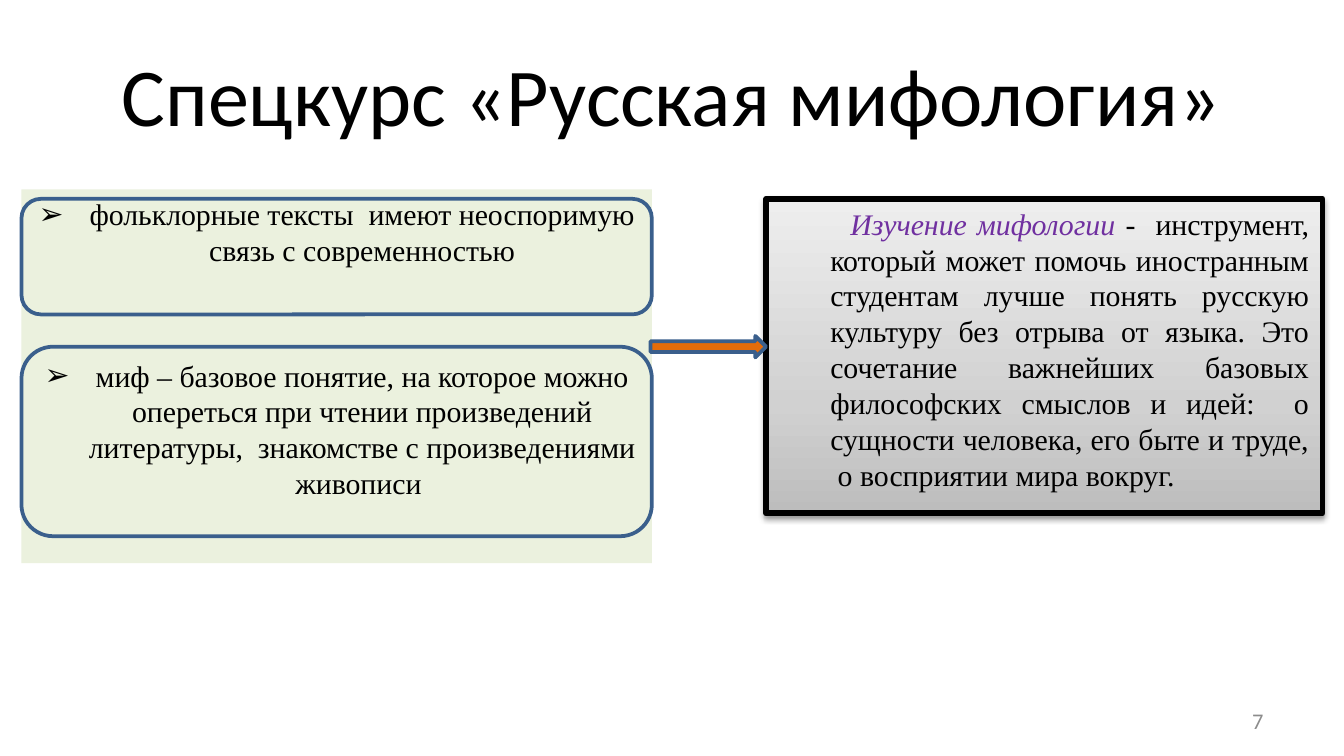
from lxml import etree
from pptx import Presentation
from pptx.dml.color import RGBColor
from pptx.enum.shapes import MSO_SHAPE
from pptx.enum.text import MSO_ANCHOR, PP_ALIGN
from pptx.oxml.ns import qn
from pptx.util import Inches, Pt

RECTANGLE = MSO_SHAPE.RECTANGLE
ROUNDED = MSO_SHAPE.ROUNDED_RECTANGLE
ARROW = MSO_SHAPE.RIGHT_ARROW
CENTER, JUSTIFY, RIGHT = PP_ALIGN.CENTER, PP_ALIGN.JUSTIFY, PP_ALIGN.RIGHT
TOP, MIDDLE = MSO_ANCHOR.TOP, MSO_ANCHOR.MIDDLE

COLORS = {
    "text": "000000",
    "accent": "7030A0",
    "number": "8C8C8C",
    "panel": "EBF1DE",
    "outline": "3A5F8C",
    "arrow": "E46C0A",
}
CARD_GRADIENT = [(0, "BDBDBD"), (35, "D1D1D1"), (100, "EEEEEE")]
HEADING_FONT, BODY_FONT = "Calibri", "Times New Roman"
TEXT_INDENT = 0.38

THESES = [
    "фольклорные тексты  имеют неоспоримую связь с современностью",
    "миф – базовое понятие, на которое можно опереться при чтении "
    "произведений литературы,  знакомстве с произведениями живописи ",
]
CONCLUSION_LEAD = "Изучение мифологии "
CONCLUSION = (
    "-  инструмент, который может помочь иностранным студентам лучше понять "
    "русскую культуру без отрыва от языка. Это сочетание важнейших базовых "
    "философских смыслов и идей:  о сущности человека, его быте и труде,  "
    "о восприятии мира вокруг."
)


def rgb(name):
    return RGBColor.from_string(COLORS[name])


def add_box(slide, kind, box, fill=None, line=None, line_width=2):
    shape = slide.shapes.add_shape(kind, *map(Inches, box))
    shape.shadow.inherit = False
    if fill:
        shape.fill.solid()
        shape.fill.fore_color.rgb = rgb(fill)
    else:
        shape.fill.background()
    if line:
        shape.line.color.rgb = rgb(line)
        shape.line.width = Pt(line_width)
    else:
        shape.line.fill.background()
    shape.text_frame.word_wrap = True
    shape.text_frame.vertical_anchor = TOP
    return shape


def format_paragraph(paragraph, font, size, color, alignment):
    paragraph.alignment = alignment
    paragraph.font.name = font
    paragraph.font.size = Pt(size)
    paragraph.font.color.rgb = rgb(color)


def format_body(paragraph, alignment, first_line, bullet=None):
    """Body text with a left margin, a first-line offset and an optional bullet."""
    paragraph.line_spacing = Pt(19.2)
    properties = paragraph._p.get_or_add_pPr()
    properties.set("marL", str(Inches(TEXT_INDENT)))
    properties.set("indent", str(Inches(first_line)))
    if bullet:
        etree.SubElement(properties, qn("a:buFont"), typeface="Arial")
        etree.SubElement(properties, qn("a:buChar"), char=bullet)
    format_paragraph(paragraph, BODY_FONT, 16, "text", alignment)


def add_title(slide, box, text):
    title = slide.shapes.title
    title.left, title.top, title.width, title.height = map(Inches, box)
    title.text_frame.text = text
    title.text_frame.vertical_anchor = MIDDLE
    format_paragraph(title.text_frame.paragraphs[0], HEADING_FONT, 44, "text", CENTER)


def add_theses(slide, box):
    """Green panel with two bulleted theses, each framed by a rounded outline."""
    left, top, width, height = box
    frame = add_box(slide, RECTANGLE, box, fill="panel").text_frame
    for index, thesis in enumerate(THESES):
        paragraph = frame.add_paragraph() if index else frame.paragraphs[0]
        paragraph.text = thesis
        if index:
            paragraph.space_before = Pt(48)
        format_body(paragraph, CENTER, -TEXT_INDENT, "➢")
    for offset, outline_height in [(0.07, 0.86), (1.17, 1.41)]:
        add_box(slide, ROUNDED, (left, top + offset, width, outline_height), line="outline")


def apply_card_style(shape):
    """Grey vertical gradient and a soft shadow below."""
    shape.fill.gradient()
    shape.fill.gradient_angle = 90
    stops = shape._element.spPr.find(".//" + qn("a:gsLst"))
    for stop in list(stops):
        stops.remove(stop)
    for position, color in CARD_GRADIENT:
        stop = etree.SubElement(stops, qn("a:gs"), pos=str(position * 1000))
        etree.SubElement(stop, qn("a:srgbClr"), val=color)
    effects = shape._element.spPr.find(qn("a:effectLst"))
    shadow = etree.SubElement(
        effects, qn("a:outerShdw"), blurRad=str(Pt(3.1)), dist=str(Pt(1.6)),
        dir="5400000", rotWithShape="0")
    shadow_color = etree.SubElement(shadow, qn("a:srgbClr"), val=COLORS["text"])
    etree.SubElement(shadow_color, qn("a:alpha"), val="38000")


def add_conclusion(slide, box):
    card = add_box(slide, RECTANGLE, box, line="text", line_width=3)
    apply_card_style(card)
    paragraph = card.text_frame.paragraphs[0]
    format_body(paragraph, JUSTIFY, 0.15)
    lead = paragraph.add_run()
    lead.text = CONCLUSION_LEAD
    lead.font.italic = True
    lead.font.color.rgb = rgb("accent")
    paragraph.add_run().text = CONCLUSION


def add_slide_number(slide, box, number):
    frame = slide.shapes.add_textbox(*map(Inches, box)).text_frame
    frame.word_wrap = True
    frame.vertical_anchor = MIDDLE
    frame.text = number
    format_paragraph(frame.paragraphs[0], HEADING_FONT, 12, "number", RIGHT)


def main():
    presentation = Presentation()
    presentation.slide_width = Inches(10)
    presentation.slide_height = Inches(10) * 9 // 16
    slide = presentation.slides.add_slide(presentation.slide_layouts[5])
    add_title(slide, (0.5, 0.23, 9, 0.94), "Спецкурс «Русская мифология»")
    add_theses(slide, (0.16, 1.41, 4.69, 2.78))
    add_conclusion(slide, (5.7, 1.48, 4.14, 2.34))
    add_box(slide, ARROW, (4.84, 2.5, 0.86, 0.16), fill="arrow", line="outline")
    add_slide_number(slide, (7.17, 5.21, 2.33, 0.3), "7")
    presentation.save("out.pptx")


if __name__ == "__main__":
    main()
